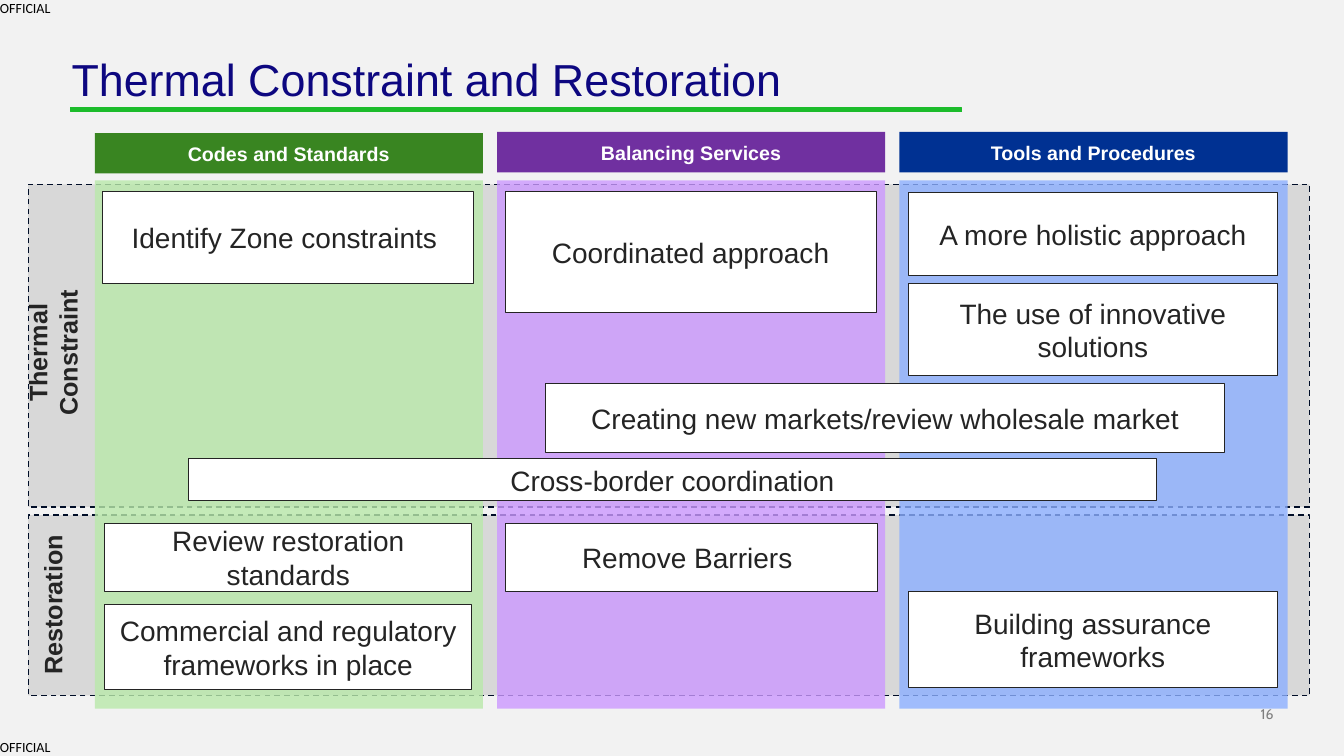
import pptx
import pptx.util
import pptx.dml.color
import pptx.enum.dml
import pptx.enum.shapes
import pptx.enum.text
import pptx.oxml.ns
import lxml.etree

Inches = pptx.util.Inches
Pt = pptx.util.Pt
RGB = pptx.dml.color.RGBColor
ALIGN = pptx.enum.text.PP_ALIGN
ANCHOR = pptx.enum.text.MSO_ANCHOR

PAPER = RGB(0xF2, 0xF2, 0xF2)
WHITE = RGB(0xFF, 0xFF, 0xFF)
BLACK = RGB(0x00, 0x00, 0x00)
GREY = RGB(0x7F, 0x7F, 0x7F)
INK = RGB(0x24, 0x24, 0x24)
NAVY = RGB(0x0D, 0x07, 0x80)
LIME = RGB(0x1C, 0xBC, 0x2B)
BAND = RGB(0xD8, 0xD8, 0xD8)
DASH = RGB(0x00, 0x0D, 0x27)
GREEN = RGB(0x39, 0x85, 0x21)
MINT = RGB(0xB9, 0xE9, 0xAA)
PURPLE = RGB(0x70, 0x30, 0xA0)
LILAC = RGB(0xCC, 0x99, 0xFF)
BLUE = RGB(0x00, 0x31, 0x92)
SKY = RGB(0x8C, 0xAF, 0xFF)

LEFT, STEP, WIDE = 0.94, 3.99, 3.85
LONG, DEEP = 2, 0.73

deck = pptx.Presentation()
deck.slide_width = Inches(13.33)
deck.slide_height = Inches(7.5)
slide = deck.slides.add_slide(deck.slide_layouts[6])
slide.background.fill.solid()
slide.background.fill.fore_color.rgb = PAPER


def write(shape, text, size, color, bold=False, font="Arial",
          align=ALIGN.CENTER, anchor=ANCHOR.MIDDLE, inset=True):
    frame = shape.text_frame
    frame.word_wrap = True
    frame.vertical_anchor = anchor
    frame.margin_left = frame.margin_right = Inches(0.1 * inset)
    frame.margin_top = frame.margin_bottom = Inches(0.05 * inset)
    para = frame.paragraphs[0]
    para.text = text
    para.alignment = align
    para.font.name = font
    para.font.size = Pt(size)
    para.font.bold = bold
    para.font.color.rgb = color
    return para


def block(x, y, w, h, fill, line=None, width=0.75):
    shape = slide.shapes.add_shape(
        pptx.enum.shapes.MSO_SHAPE.RECTANGLE,
        Inches(x), Inches(y), Inches(w), Inches(h))
    shape.shadow.inherit = False
    shape.fill.solid()
    shape.fill.fore_color.rgb = fill
    if line is None:
        shape.line.fill.background()
    else:
        shape.line.color.rgb = line
        shape.line.width = Pt(width)
    return shape


labels = [
    (12.21, 7, 0.42, 0.17, "16", 10, GREY, "Cabin", ALIGN.RIGHT, ANCHOR.BOTTOM),
    (0, 7.33, 0.53, 0.17, "OFFICIAL", 10, BLACK, "Calibri", ALIGN.LEFT, ANCHOR.TOP),
    (0, 0, 0.53, 0.17, "OFFICIAL", 10, BLACK, "Calibri", ALIGN.LEFT, ANCHOR.TOP),
    (0.71, 0.57, 8.86, 0.48, "Thermal Constraint and Restoration", 32, NAVY,
     "Arial", ALIGN.LEFT, ANCHOR.TOP),
]
for x, y, w, h, text, size, color, font, align, anchor in labels:
    box = slide.shapes.add_textbox(Inches(x), Inches(y), Inches(w), Inches(h))
    title = write(box, text, size, color, False, font, align, anchor, False)
title.line_spacing = 0.9
block(0.7, 1.07, 8.84, 0.04, LIME, LIME)

bands = [
    ("Restoration", 5.11, 1.79, 6),
    ("Thermal Constraint", 1.83, 3.2, 3.5),
]
for text, top, high, mid in bands:
    band = block(0.28, top, 12.71, high, BAND, DASH, 1)
    band.line.dash_style = pptx.enum.dml.MSO_LINE.DASH
    side = slide.shapes.add_textbox(
        Inches(0.52 - LONG / 2), Inches(mid - DEEP / 2), Inches(LONG), Inches(DEEP))
    side.rotation = 270
    write(side, text, 18, INK, True)

columns = [
    ("Codes and Standards", 1.32, GREEN, MINT),
    ("Balancing Services", 1.31, PURPLE, LILAC),
    ("Tools and Procedures", 1.31, BLUE, SKY),
]
for col, (text, top, dark, pale) in enumerate(columns):
    x = LEFT + col * STEP
    write(block(x, top, WIDE, 0.4, dark), text, 14, WHITE, True)
    panel = block(x, 1.79, WIDE, 5.24, pale)
    tint = panel.fill._xPr.find(".//" + pptx.oxml.ns.qn("a:srgbClr"))
    lxml.etree.SubElement(tint, pptx.oxml.ns.qn("a:alpha"), val="80000")

cards = [
    (0, 0.08, 1.9, 3.68, 0.91, "Identify Zone constraints "),
    (2, 0.09, 1.91, 3.66, 0.82, "A more holistic approach"),
    (1, 0.08, 1.9, 3.68, 1.2, "Coordinated approach"),
    (2, 0.09, 2.81, 3.66, 0.92, "The use of innovative solutions"),
    (0, 0.93, 4.55, 9.6, 0.42, "Cross-border coordination"),
    (1, 0.08, 5.19, 3.69, 0.68, "Remove Barriers "),
    (0, 0.1, 5.19, 3.64, 0.68, "Review restoration standards"),
    (2, 0.09, 5.87, 3.66, 0.95, "Building assurance frameworks"),
    (0, 0.1, 6, 3.64, 0.84, "Commercial and regulatory frameworks in place"),
    (1, 0.48, 3.8, 6.74, 0.69, "Creating new markets/review wholesale market"),
]
for col, shift, top, wide, high, text in cards:
    card = block(LEFT + col * STEP + shift, top, wide, high, WHITE, INK)
    write(card, text, 20, INK)

deck.save("out.pptx")
